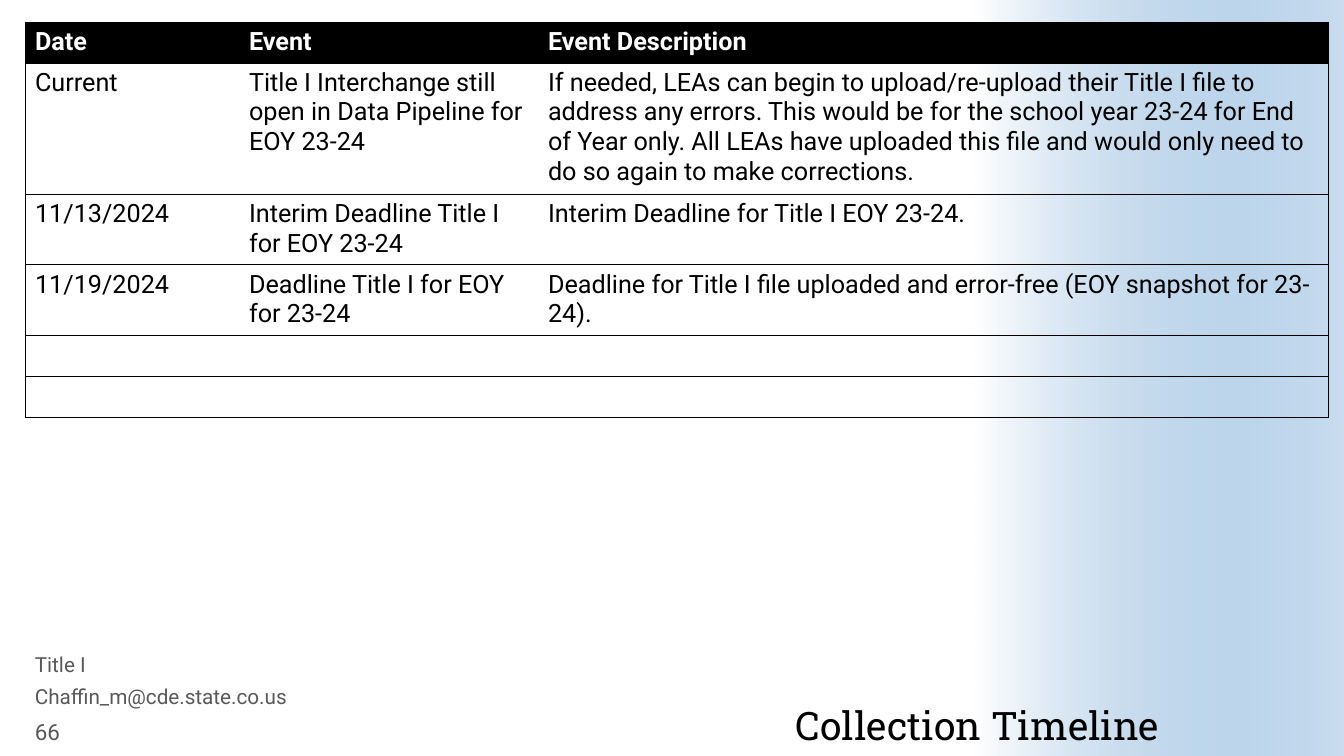
from dataclasses import dataclass

from lxml import etree
from pptx import Presentation
from pptx import util as u
from pptx.dml.color import RGBColor
from pptx.enum import shapes, text
from pptx.oxml import ns

EMU_PER_PX = 914400 / 100.8
BLACK, WHITE, GREY, BLUE = "000000", "FFFFFF", "595959", "488BC9"
BODY_FONT, TITLE_FONT = "Roboto", "Roboto Slab"
PLAIN_TABLE = "{2D5ABB26-0587-4C30-8999-92F81FD0307C}"
BORDER_PT = 0.5

COLUMN_WIDTHS = (214, 299, 790)
ROW_HEIGHT = 41
TIMELINE = (
    ("Date", "Event", "Event Description"),
    ("Current", "Title I Interchange still open in Data Pipeline for EOY 23-24",
     "If needed, LEAs can begin to upload/re-upload their Title I file to address "
     "any errors. This would be for the school year 23-24 for End of Year only. "
     "All LEAs have uploaded this file and would only need to do so again to make "
     "corrections."),
    ("11/13/2024", "Interim Deadline Title I for EOY 23-24",
     "Interim Deadline for Title I EOY 23-24."),
    ("11/19/2024", "Deadline Title I for EOY for 23-24",
     "Deadline for Title I file uploaded and error-free (EOY snapshot for 23-24)."),
    ("", "", ""),
    ("", "", ""),
)


@dataclass(frozen=True)
class Label:
    words: str
    box: tuple[int, int, int, int]
    size: float
    line_spacing: float = 1.0
    font: str = BODY_FONT
    color: str = GREY
    align: text.PP_ALIGN = text.PP_ALIGN.LEFT
    anchor: text.MSO_ANCHOR = text.MSO_ANCHOR.TOP
    inset: bool = True


LABELS = (
    Label("Collection Timeline", (429, 650, 730, 99), 28, 0.9, TITLE_FONT, BLACK,
          text.PP_ALIGN.RIGHT, text.MSO_ANCHOR.BOTTOM, inset=False),
    Label("66", (25, 716, 86, 31), 16, anchor=text.MSO_ANCHOR.MIDDLE),
    Label("Title I", (25, 652, 392, 31), 14.8, 0.8),
    Label("Chaffin_m@cde.state.co.us", (25, 684, 392, 31), 14.8, 0.8),
)


def px(length: int) -> u.Emu:
    return u.Emu(round(length * EMU_PER_PX))


def rgb(color: str) -> RGBColor:
    return RGBColor.from_string(color)


def set_all(target, values: dict) -> None:
    for name, value in values.items():
        setattr(target, name, value)


def style_font(font, color: str, **values) -> None:
    set_all(font, values)
    font.color.rgb = rgb(color)


def add_side_gradient(slide) -> None:
    """Fade from white to translucent blue along the right edge."""
    band = slide.shapes.add_shape(
        shapes.MSO_SHAPE.RECTANGLE, px(975), 0, px(369), px(756))
    band.shadow.inherit = False
    band.line.fill.background()
    band.fill.gradient()
    band.fill.gradient_angle = 0
    for stop, position, color in zip(band.fill.gradient_stops, (0, 1), (WHITE, BLUE)):
        stop.position = position
        stop.color.rgb = rgb(color)
    blue = band.fill._fill._gradFill.findall(".//" + ns.qn("a:srgbClr"))[-1]
    etree.SubElement(blue, ns.qn("a:alpha"), val="30000")


def add_label(slide, label: Label) -> None:
    frame = slide.shapes.add_textbox(*map(px, label.box)).text_frame
    set_all(frame, {"word_wrap": True, "vertical_anchor": label.anchor})
    if not label.inset:
        set_all(frame, dict.fromkeys(
            ("margin_left", "margin_top", "margin_right", "margin_bottom"), 0))
    line = frame.paragraphs[0]
    line.text = label.words
    set_all(line, {"alignment": label.align, "line_spacing": label.line_spacing})
    style_font(line.runs[0].font, label.color, name=label.font, size=u.Pt(label.size))


def set_borders(cell, sides: str) -> None:
    """Draw the listed sides (out of L, R, T, B) and clear the others."""
    properties = cell._tc.get_or_add_tcPr()
    for side in "LRTB":
        border = etree.SubElement(
            properties, ns.qn(f"a:ln{side}"), w=str(u.Pt(BORDER_PT)))
        if side in sides:
            fill = etree.SubElement(border, ns.qn("a:solidFill"))
            etree.SubElement(fill, ns.qn("a:srgbClr"), val=BLACK)
        else:
            etree.SubElement(border, ns.qn("a:noFill"))


def add_timeline(slide) -> None:
    frame = slide.shapes.add_table(
        len(TIMELINE), len(COLUMN_WIDTHS), px(25), px(22),
        px(sum(COLUMN_WIDTHS)), px(ROW_HEIGHT * len(TIMELINE)))
    table = frame.table
    table.horz_banding = False
    table._tbl.tblPr.find(ns.qn("a:tableStyleId")).text = PLAIN_TABLE
    for column, width in zip(table.columns, COLUMN_WIDTHS):
        column.width = px(width)
    last_column = len(COLUMN_WIDTHS) - 1
    for row, entries in enumerate(TIMELINE):
        is_header = row == 0
        for column, entry in enumerate(entries):
            cell = table.cell(row, column)
            set_borders(cell, "TB" + "L" * (column == 0) + "R" * (column == last_column))
            if is_header:
                cell.fill.solid()
                cell.fill.fore_color.rgb = rgb(BLACK)
            else:
                cell.fill.background()
            if entry:
                cell.text = entry
                style_font(cell.text_frame.paragraphs[0].runs[0].font,
                           WHITE if is_header else BLACK,
                           name=BODY_FONT, size=u.Pt(18), bold=is_header)


def main() -> None:
    deck = Presentation()
    set_all(deck, {"slide_width": px(1344), "slide_height": px(756)})
    slide = deck.slides.add_slide(deck.slide_layouts[6])
    add_side_gradient(slide)
    for label in LABELS:
        add_label(slide, label)
    add_timeline(slide)
    deck.save("out.pptx")


if __name__ == "__main__":
    main()
